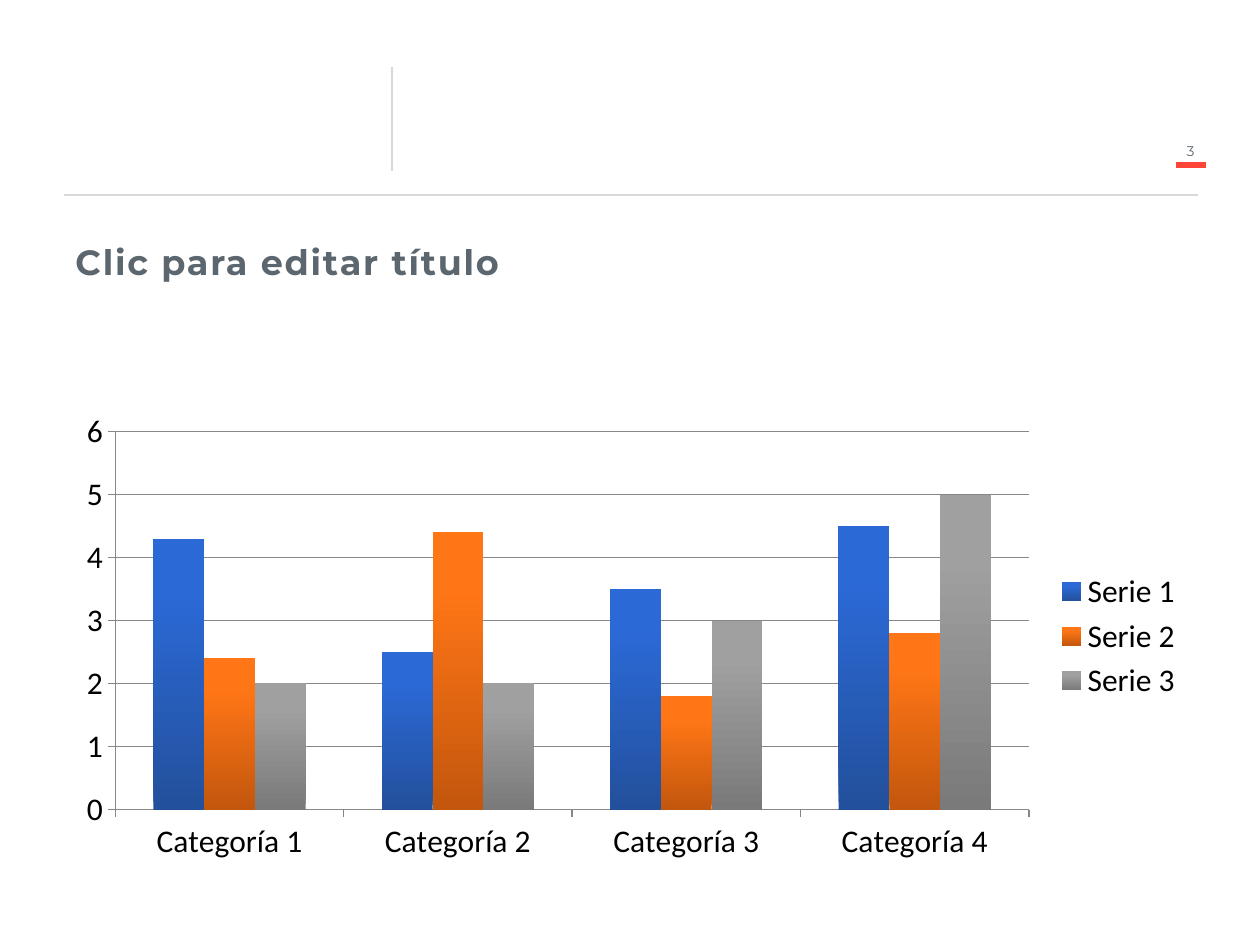
from typing import NamedTuple

from lxml.etree import SubElement
from pptx import Presentation
from pptx.chart.data import CategoryChartData
from pptx.dml.color import RGBColor
from pptx.enum.chart import XL_CHART_TYPE, XL_LEGEND_POSITION, XL_TICK_MARK
from pptx.enum.shapes import MSO_CONNECTOR
from pptx.enum.text import PP_ALIGN
from pptx.oxml.ns import qn
from pptx.util import Inches, Pt

COLORS = {
    "slate": "5C666F", "rule": "D9D9D9", "accent": "FF4438",
    "axis": "878787", "black": "000000",
}


class Rule(NamedTuple):
    start: tuple[float, float]
    end: tuple[float, float]
    color: str
    weight: float


class Label(NamedTuple):
    text: str
    area: tuple[float, float, float, float]
    size: int
    bold: bool
    align: PP_ALIGN
    margins: tuple[float, float]  # horizontal, vertical
    spacing: int  # hundredths of a point


class Series(NamedTuple):
    name: str
    values: tuple[float, ...]
    bottom: str
    top: str


RULES = [
    Rule((9.33, 1.31), (9.57, 1.31), "accent", 3),
    Rule((0.51, 1.55), (9.51, 1.55), "rule", 1.25),
    Rule((3.11, 0.53), (3.11, 1.36), "rule", 1.25),
]
LABELS = [
    Label("3", (9.2, 1.11, 0.5, 0.2), 8, False, PP_ALIGN.CENTER, (0.02, 0.02), 0),
    Label("Clic para editar título", (0.5, 1.86, 9, 0.71), 20, True,
          PP_ALIGN.LEFT, (0.1, 0.05), 100),
]
CATEGORIES = [f"Categoría {number}" for number in range(1, 5)]
SERIES = [
    Series("Serie 1", (4.3, 2.5, 3.5, 4.5), "23509C", "2B69D6"),
    Series("Serie 2", (2.4, 4.4, 1.8, 2.8), "C3570D", "FF7616"),
    Series("Serie 3", (2, 2, 3, 5), "7A7A7A", "A0A0A0"),
]


def rgb(name: str) -> RGBColor:
    return RGBColor.from_string(COLORS[name])


def set_font(font, **values) -> None:
    for key, value in values.items():
        setattr(font, key, value)


def draw_rule(page, rule: Rule) -> None:
    points = [Inches(value) for value in (*rule.start, *rule.end)]
    line = page.shapes.add_connector(MSO_CONNECTOR.STRAIGHT, *points)
    line.line.color.rgb = rgb(rule.color)
    line.line.width = Pt(rule.weight)
    SubElement(line._element.spPr, qn("a:effectLst"))


def draw_label(page, label: Label) -> None:
    box = page.shapes.add_textbox(*map(Inches, label.area))
    frame = box.text_frame
    frame.word_wrap = True
    horizontal, vertical = map(Inches, label.margins)
    frame.margin_left = frame.margin_right = horizontal
    frame.margin_top = frame.margin_bottom = vertical
    para = frame.paragraphs[0]
    para.alignment = label.align
    span = para.add_run()
    span.text = label.text
    set_font(span.font, name="Montserrat", size=Pt(label.size), bold=label.bold)
    span.font.color.rgb = rgb("slate")
    if label.spacing:
        span.font._element.set("spc", str(label.spacing))


def draw_chart(page) -> None:
    data = CategoryChartData()
    data.categories = CATEGORIES
    for series in SERIES:
        data.add_series(series.name, series.values)
    area = map(Inches, (0.51, 3.2, 8.98, 3.7))
    chart = page.shapes.add_chart(XL_CHART_TYPE.COLUMN_CLUSTERED, *area, data).chart
    set_font(chart.font, name="Calibri", size=Pt(18))
    chart.font.color.rgb = rgb("black")
    chart.has_title = False
    chart.has_legend = True
    chart.legend.position = XL_LEGEND_POSITION.RIGHT
    chart.legend.include_in_layout = False

    # Axes and grid
    value_axis = chart.value_axis
    value_axis.minimum_scale, value_axis.maximum_scale = 0, 6
    value_axis.major_unit = 1
    value_axis.has_major_gridlines = True
    for axis in (chart.category_axis, value_axis):
        axis.major_tick_mark = XL_TICK_MARK.OUTSIDE
    for part in (chart.category_axis, value_axis, value_axis.major_gridlines):
        part.format.line.color.rgb = rgb("axis")
        part.format.line.width = Pt(0.75)

    # Columns shade from dark at the foot to bright near the top
    plot = chart.plots[0]
    plot.gap_width = 150
    plot.overlap = 0
    plot.vary_by_categories = False
    for column, series in zip(plot.series, SERIES):
        fill = column.format.fill
        fill.gradient()
        fill.gradient_angle = 90
        stops = zip(fill.gradient_stops, (series.bottom, series.top), (0, 0.8))
        for stop, color, position in stops:
            stop.color.rgb = RGBColor.from_string(color)
            stop.position = position


def main() -> None:
    deck = Presentation()
    deck.slide_width, deck.slide_height = Inches(10), Inches(7.5)
    page = deck.slides.add_slide(deck.slide_layouts[6])

    # Header rules, page number and title
    for rule in RULES:
        draw_rule(page, rule)
    for label in LABELS:
        draw_label(page, label)

    # Column chart
    draw_chart(page)
    deck.save("out.pptx")


if __name__ == "__main__":
    main()
